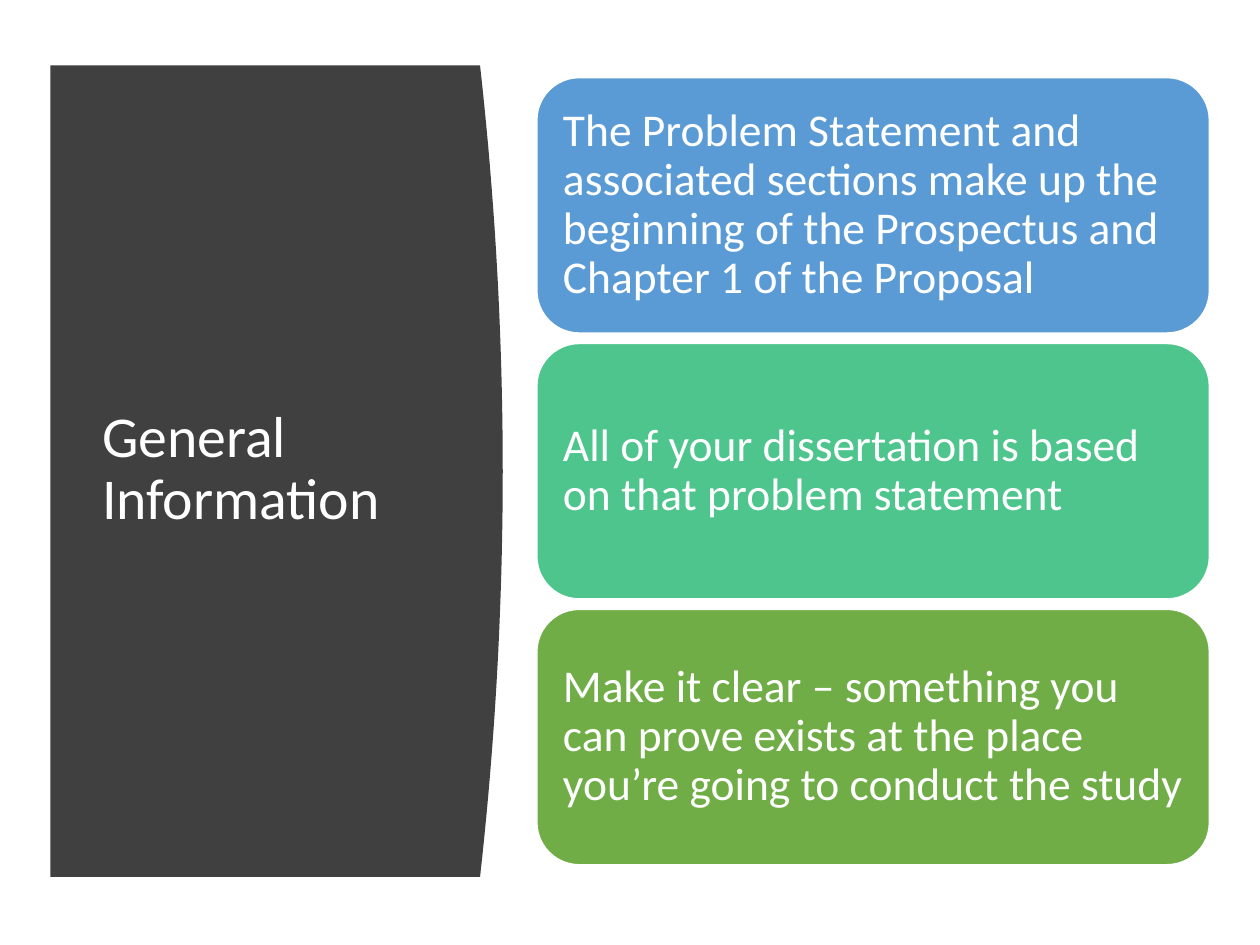
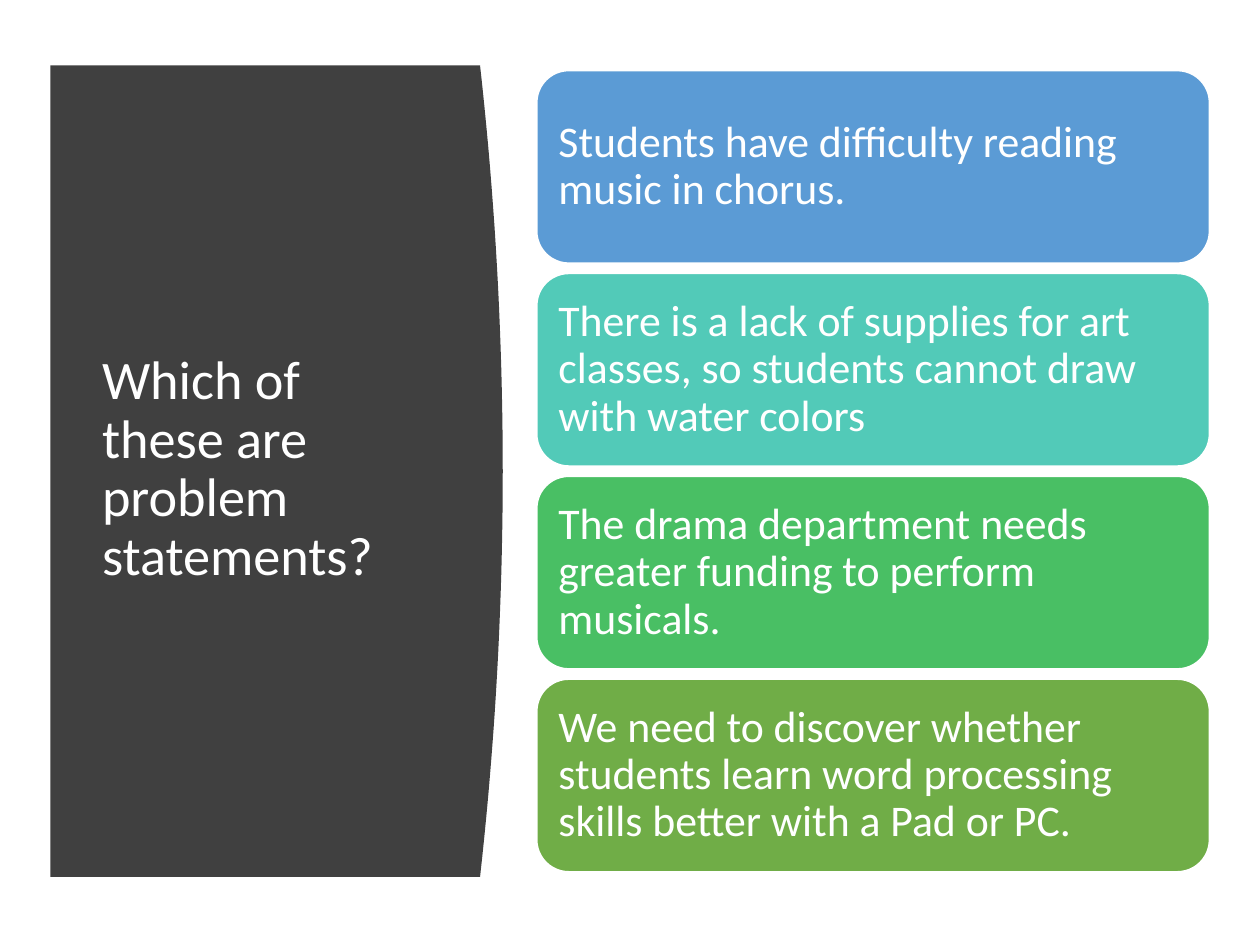
from pptx import Presentation
from pptx.dml.color import RGBColor
from pptx.enum.shapes import MSO_SHAPE
from pptx.enum.text import MSO_ANCHOR, MSO_AUTO_SIZE, PP_ALIGN
from pptx.util import Inches, Pt

ROUNDED = MSO_SHAPE.ROUNDED_RECTANGLE
MIDDLE = MSO_ANCHOR.MIDDLE
LEFT = PP_ALIGN.LEFT
NO_AUTOFIT = MSO_AUTO_SIZE.NONE
TITLE_ONLY = 5

FONT = "Calibri"
WHITE = "FFFFFF"
CHARCOAL = "404040"
BLUE = "5B9BD5"
MINT = "4DC58D"
TEAL = "52CAB8"
EMERALD = "49BF64"
GREEN = "70AD47"

# Boxes as left, top, width, height in inches
PANEL_BOX = (0.4, 0.52, 3.59, 6.44)
CARDS_BOX = (4.26, 0.52, 5.34, 6.44)
PANEL_BULGE = 0.18
CURVE_STEPS = 40

SLIDES = [
    dict(
        title="General Information", title_size=33,
        card_height=2.03, card_size=26, inset=0.11,
        cards=[
            ("The Problem Statement and associated sections make up the "
             "beginning of the Prospectus and Chapter 1 of the Proposal", BLUE),
            ("All of your dissertation is based on that problem statement", MINT),
            ("Make it clear – something you can prove exists at the place "
             "you’re going to conduct the study", GREEN),
        ],
    ),
    dict(
        title="Which of these are problem statements?", title_size=31,
        card_height=1.53, card_size=25, inset=0.1,
        cards=[
            ("Students have difficulty reading music in chorus.", BLUE),
            ("There is a lack of supplies for art classes, so students "
             "cannot draw with water colors", TEAL),
            ("The drama department needs greater funding to perform musicals.",
             EMERALD),
            ("We need to discover whether students learn word processing "
             "skills better with a Pad or PC.", GREEN),
        ],
    ),
]
CARD_GAP = 0.08


def color(hex_string):
    return RGBColor.from_string(hex_string)


def place(shape, left, top, width, height):
    shape.left, shape.top = Inches(left), Inches(top)
    shape.width, shape.height = Inches(width), Inches(height)


def paint(shape, fill, line=None):
    shape.shadow.inherit = False
    shape.fill.solid()
    shape.fill.fore_color.rgb = color(fill)
    if line:
        shape.line.color.rgb = color(line)
        shape.line.width = Pt(1)
    else:
        shape.line.fill.background()


def write(shape, text, size, inset=0.1, inset_y=None):
    """Fill a shape with one white, left-aligned, vertically centred paragraph."""
    frame = shape.text_frame
    frame.text = text
    frame.word_wrap = True
    frame.auto_size = NO_AUTOFIT
    frame.vertical_anchor = MIDDLE
    frame.margin_left = frame.margin_right = Inches(inset)
    frame.margin_top = frame.margin_bottom = Inches(
        inset if inset_y is None else inset_y)
    paragraph = frame.paragraphs[0]
    paragraph.alignment = LEFT
    paragraph.line_spacing = 0.9
    font = paragraph.runs[0].font
    font.name, font.size = FONT, Pt(size)
    font.color.rgb = color(WHITE)


def add_title_panel(slide, box, title, size):
    """Draw the dark panel with its bowed right edge and set the title on it."""
    left, top, width, height = box
    edge = left + width - PANEL_BULGE
    curve = []
    for step in range(CURVE_STEPS + 1):
        along = step / CURVE_STEPS
        bow = PANEL_BULGE * (1 - (2 * along - 1) ** 2)
        curve.append((Inches(edge + bow), Inches(top + height * along)))
    builder = slide.shapes.build_freeform(Inches(left), Inches(top))
    builder.add_line_segments(curve + [(Inches(left), Inches(top + height))])
    paint(builder.convert_to_shape(), CHARCOAL)

    heading = slide.shapes.title
    place(heading, left + 0.31, top + 0.59, 2.8, height - 1.2)
    write(heading, title, size, inset_y=0.05)
    heading.element.getparent().append(heading.element)


def add_cards(slide, box, cards, card_height, size, inset):
    """Stack equal cards, centred vertically in the box."""
    left, top, width, height = box
    pitch = card_height + CARD_GAP
    first_top = top + (height - len(cards) * pitch + CARD_GAP) / 2
    for index, (text, fill) in enumerate(cards):
        card = slide.shapes.add_shape(ROUNDED, 0, 0, 0, 0)
        place(card, left, first_top + index * pitch, width, card_height)
        paint(card, fill, line=WHITE)
        write(card, text, size, inset)


def add_card_slide(presentation, content):
    slide = presentation.slides.add_slide(presentation.slide_layouts[TITLE_ONLY])
    add_title_panel(slide, PANEL_BOX, content["title"], content["title_size"])
    add_cards(slide, CARDS_BOX, content["cards"], content["card_height"],
              content["card_size"], content["inset"])


def main():
    presentation = Presentation()
    presentation.slide_width, presentation.slide_height = Inches(10), Inches(7.5)
    for content in SLIDES:
        add_card_slide(presentation, content)
    presentation.save("out.pptx")


if __name__ == "__main__":
    main()
